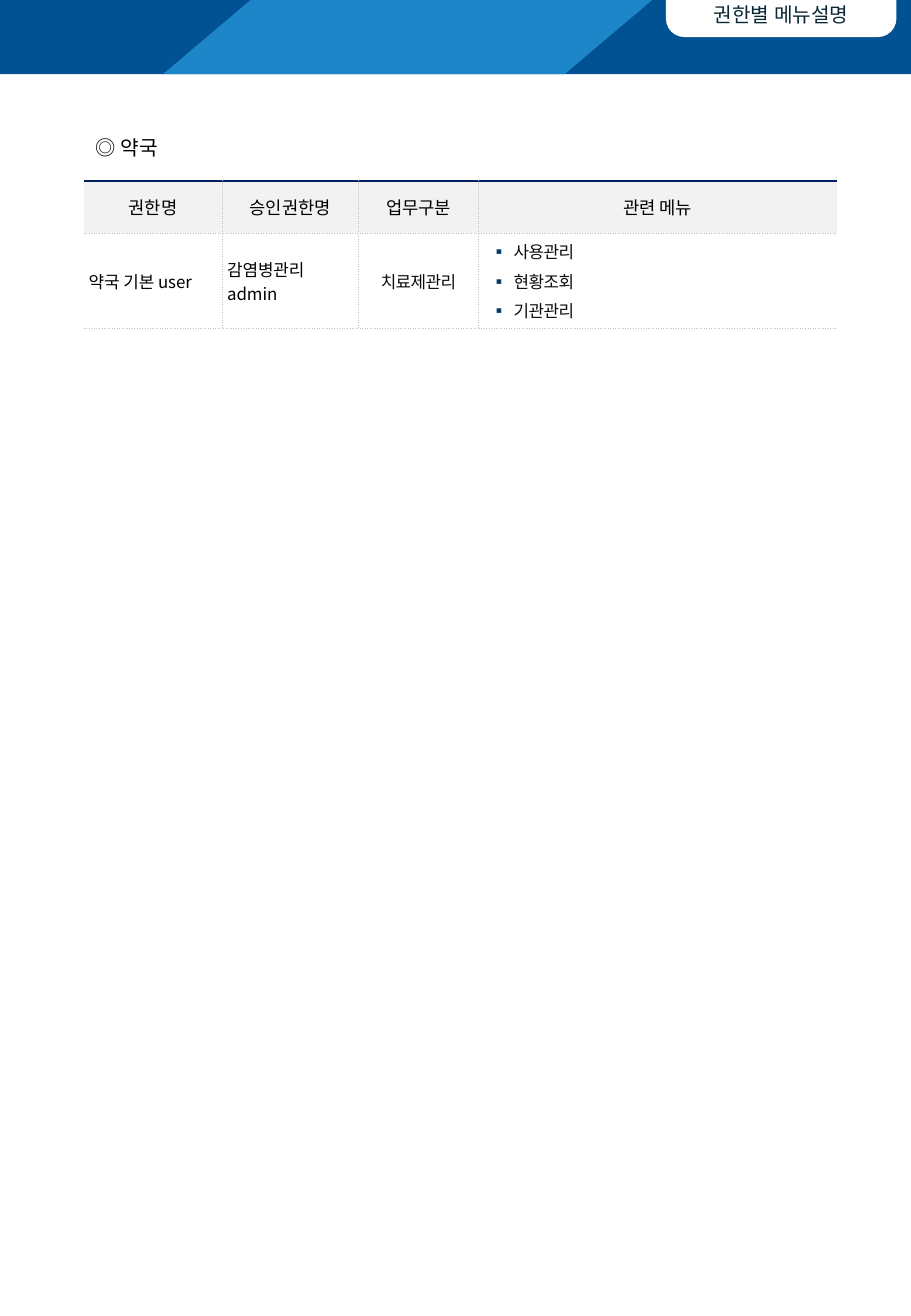
from dataclasses import dataclass

from lxml.etree import SubElement
from pptx import Presentation
from pptx.dml.color import RGBColor
from pptx.enum.shapes import MSO_SHAPE
from pptx.enum.text import MSO_ANCHOR, MSO_AUTO_SIZE, PP_ALIGN
from pptx.oxml.ns import qn
from pptx.util import Inches, Pt


@dataclass(frozen=True)
class Theme:
    font: str = "Noto Sans CJK KR"
    navy: str = "025192"
    blue: str = "1C86C8"
    white: str = "FFFFFF"
    tab_text: str = "0B2837"
    black: str = "000000"
    soft_black: str = "0D0D0D"
    bullet: str = "013967"
    head_fill: str = "F2F2F2"
    head_rule: str = "002060"
    dots: str = "BFBFBF"
    title_size: float = 12
    head_size: float = 10.5
    body_size: float = 10


T = Theme()
SLIDE_W, SLIDE_H = 7.5, 10.83
COLUMNS = [1.14, 1.12, 0.99, 2.95]
ROWS = [0.43, 0.68]
HEADINGS = ["권한명", "승인권한명", "업무구분", "관련 메뉴"]
ROLES = ["약국 기본 user", "감염병관리 admin"]
TASK = "치료제관리"
MENUS = ["사용관리", "현황조회", "기관관리"]


def add_run(p, text, size, color, spacing=None):
    r = p.add_run()
    r.text = text
    r.font.size = Pt(size)
    r.font.name = T.font
    r.font.color.rgb = RGBColor.from_string(color)
    rPr = r.font._element
    SubElement(rPr, qn("a:ea")).set("typeface", T.font)
    if spacing is not None:
        rPr.set("spc", str(round(spacing * 100)))


def set_margins(target, left, top, right, bottom):
    target.margin_left, target.margin_top = Inches(left), Inches(top)
    target.margin_right, target.margin_bottom = Inches(right), Inches(bottom)


def add_block(slide, kind, box, color, adjustments=()):
    sp = slide.shapes.add_shape(kind, *map(Inches, box))
    sp.shadow.inherit = False
    sp.fill.solid()
    sp.fill.fore_color.rgb = RGBColor.from_string(color)
    sp.line.fill.background()
    for i, value in enumerate(adjustments):
        sp.adjustments[i] = value
    return sp


def add_header(slide, box, text):
    x, y, w, h = box
    # Band with a slanted stripe
    add_block(slide, MSO_SHAPE.RECTANGLE, box, T.navy)
    add_block(slide, MSO_SHAPE.PARALLELOGRAM,
              (x + 0.179 * w, y, 0.537 * w, h), T.blue, [1.182])
    # Tab hanging from the top edge
    tab = add_block(slide, MSO_SHAPE.ROUND_2_SAME_RECTANGLE,
                    (x + 0.731 * w, y, 0.253 * w, h / 2), T.white, [0, 0.5])
    tf = tab.text_frame
    set_margins(tf, 0, 0, 0, 0)
    tf.vertical_anchor = MSO_ANCHOR.MIDDLE
    p = tf.paragraphs[0]
    p.alignment = PP_ALIGN.CENTER
    p.line_spacing = 0.9
    add_run(p, text, T.title_size, T.tab_text)


def add_title(slide, box, text):
    title = slide.shapes.title
    title.left, title.top, title.width, title.height = map(Inches, box)
    tf = title.text_frame
    tf.auto_size = MSO_AUTO_SIZE.NONE
    tf.vertical_anchor = MSO_ANCHOR.MIDDLE
    set_margins(tf, 0.1, 0.08, 0.1, 0.05)
    p = tf.paragraphs[0]
    p.alignment = PP_ALIGN.LEFT
    add_run(p, text, T.title_size, T.black)


def add_border(cell, side, color=None, width=0.5, dash="sysDot"):
    ln = SubElement(cell._tc.get_or_add_tcPr(), qn(f"a:ln{side}"))
    ln.set("w", str(Pt(width)))
    if color is None:
        SubElement(ln, qn("a:noFill"))
        return
    fill = SubElement(ln, qn("a:solidFill"))
    SubElement(fill, qn("a:srgbClr")).set("val", color)
    SubElement(ln, qn("a:prstDash")).set("val", dash)


def style_cell(cell, row, col):
    # Dotted inner grid, open sides, solid rule above the headings
    add_border(cell, "L", T.dots if col else None)
    add_border(cell, "R", T.dots if col < len(COLUMNS) - 1 else None)
    if row == 0:
        add_border(cell, "T", T.head_rule, 1, "solid")
    else:
        add_border(cell, "T", T.dots)
    add_border(cell, "B", T.dots)
    cell.fill.solid()
    cell.fill.fore_color.rgb = RGBColor.from_string(
        T.white if row else T.head_fill)
    cell.vertical_anchor = MSO_ANCHOR.MIDDLE


def add_bullet(p):
    pPr = p._p.get_or_add_pPr()
    pPr.set("marL", str(Inches(0.19)))
    pPr.set("indent", str(-Inches(0.19)))
    color = SubElement(pPr, qn("a:buClr"))
    SubElement(color, qn("a:srgbClr")).set("val", T.bullet)
    SubElement(pPr, qn("a:buFont")).set("typeface", T.font)
    SubElement(pPr, qn("a:buChar")).set("char", "▪")


def add_role_table(slide, left, top):
    frame = slide.shapes.add_table(
        len(ROWS), len(COLUMNS), Inches(left), Inches(top),
        Inches(sum(COLUMNS)), Inches(sum(ROWS)))
    table = frame.table
    table.first_row = table.horz_banding = False
    style = table._tbl.tblPr.find(qn("a:tableStyleId"))
    style.text = "{2D5ABB26-0587-4C30-8999-92F81FD0307C}"
    for column, width in zip(table.columns, COLUMNS):
        column.width = Inches(width)
    for i, height in enumerate(ROWS):
        table.rows[i].height = Inches(height)
        for j in range(len(COLUMNS)):
            style_cell(table.cell(i, j), i, j)
    # Headings
    for j, text in enumerate(HEADINGS):
        p = table.cell(0, j).text_frame.paragraphs[0]
        p.alignment = PP_ALIGN.CENTER
        add_run(p, text, T.head_size, T.black)
    # Role and approver
    for j, text in enumerate(ROLES):
        cell = table.cell(1, j)
        set_margins(cell, 0.04, 0.01, 0.04, 0)
        add_run(cell.text_frame.paragraphs[0], text, T.body_size, T.black)
    # Task
    p = table.cell(1, 2).text_frame.paragraphs[0]
    p.alignment = PP_ALIGN.CENTER
    p.space_after = Pt(3)
    add_run(p, TASK, T.body_size, T.soft_black, -0.3)
    # Menus
    tf = table.cell(1, 3).text_frame
    for i, text in enumerate(MENUS):
        p = tf.add_paragraph() if i else tf.paragraphs[0]
        p.space_after = Pt(3)
        add_bullet(p)
        add_run(p, text, T.body_size, T.soft_black, -0.3)


def main():
    prs = Presentation()
    prs.slide_width, prs.slide_height = Inches(SLIDE_W), Inches(SLIDE_H)
    slide = prs.slides.add_slide(prs.slide_layouts[5])
    add_header(slide, (0, 0, SLIDE_W, 0.61), "권한별 메뉴설명")
    add_title(slide, (0.69, 1.04, 4.81, 0.32), "◎ 약국")
    add_role_table(slide, 0.69, 1.49)
    prs.save("out.pptx")


if __name__ == "__main__":
    main()
